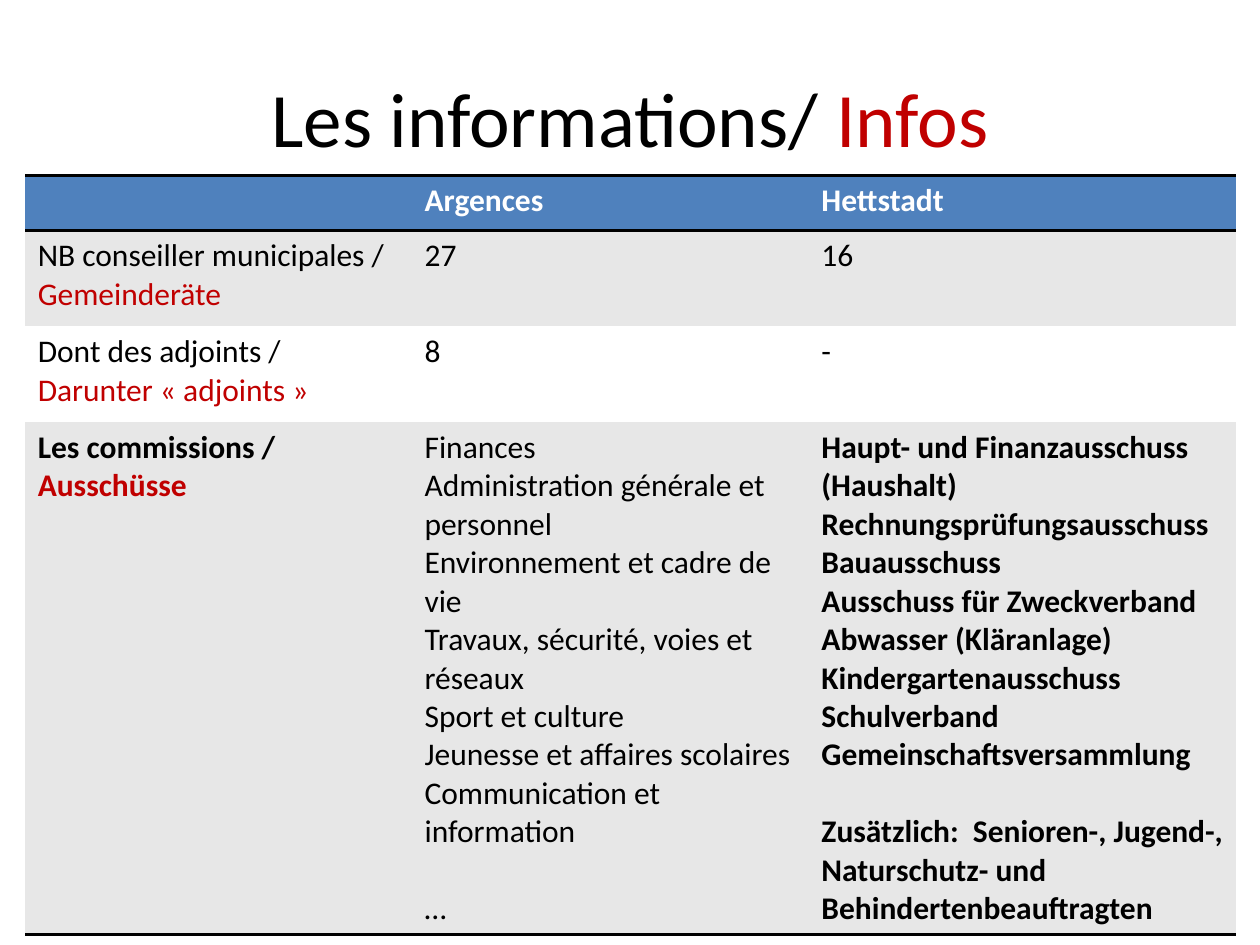
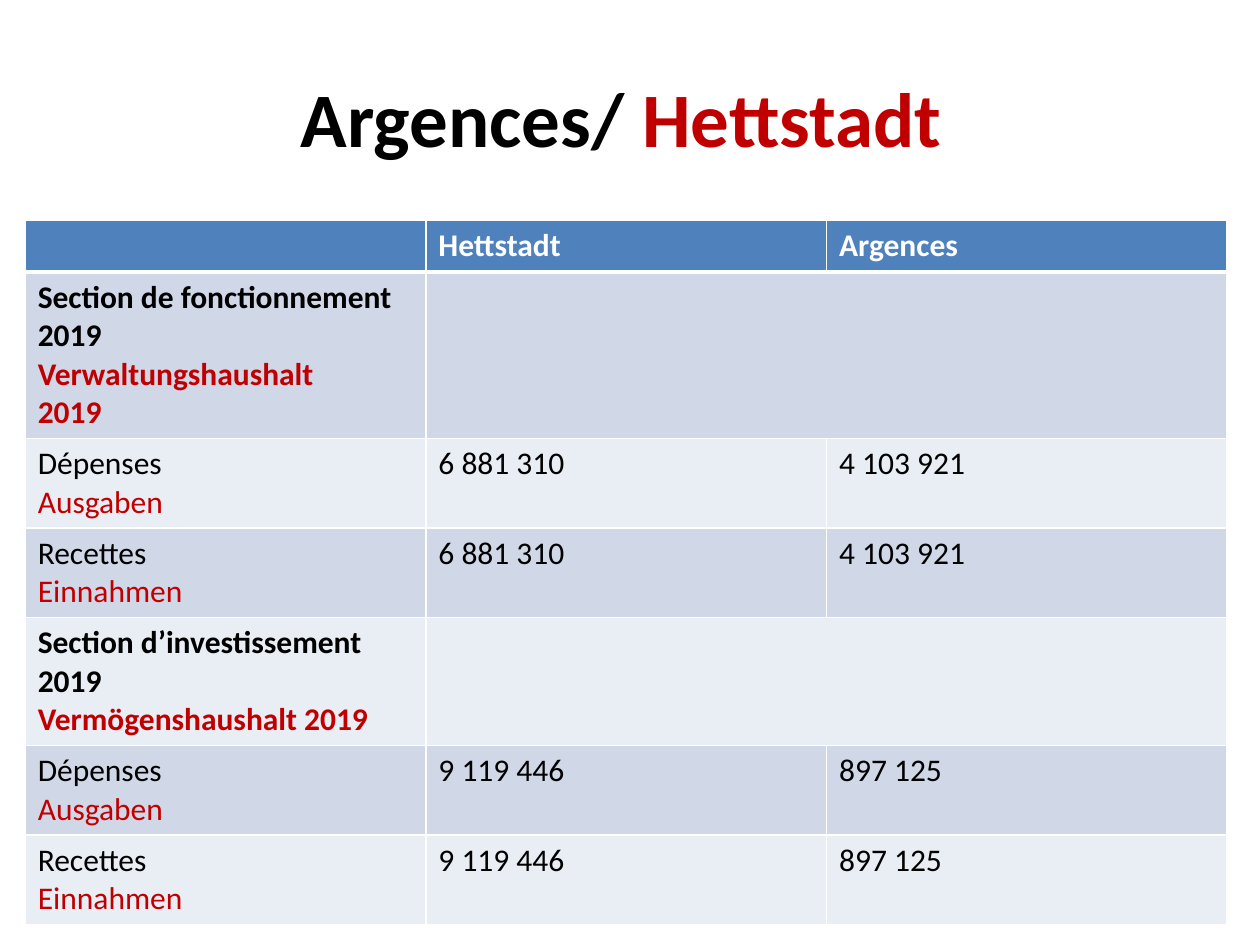
from lxml import etree
from pptx import Presentation
from pptx.dml.color import RGBColor
from pptx.enum import text
from pptx.oxml import ns
from pptx.util import Inches, Pt

COLORS = {
    "black": "000000", "red": "C00000", "white": "FFFFFF", "header": "4F81BD",
    "grey": "E7E7E7", "band": "D0D8E8", "light": "E9EDF4",
}
FONT = "Calibri"
NO_STYLE = "{2D5ABB26-0587-4C30-8999-92F81FD0307C}"


def write(p, content, size, bold, color="black"):
    for part, name in zip(content.split("|"), (color, "red")):
        if part:
            r = p.add_run()
            r.text = part
            r.font.name = FONT
            r.font.size = Pt(size)
            r.font.bold = bold
            r.font.color.rgb = RGBColor.from_string(COLORS[name])


def add_border(cell, side, color, width):
    tc_pr = cell._tc.get_or_add_tcPr()
    ln = etree.SubElement(tc_pr, ns.qn(f"a:ln{side}"), w=str(Pt(width)))
    if width:
        fill = etree.SubElement(ln, ns.qn("a:solidFill"))
        etree.SubElement(fill, ns.qn("a:srgbClr"), val=COLORS[color])
    else:
        etree.SubElement(ln, ns.qn("a:noFill"))


expenses = ["Dépenses", "|Ausgaben"]
income = ["Recettes", "|Einnahmen"]

slides = [
    {
        "title": "Les informations/ |Infos", "title_bold": False,
        "left": 0.2, "top": 1.39,
        "cols": [3.07, 3.15, 3.39], "heights": [0.44, 0.76, 0.76, 4.06],
        "bands": ["grey", "white"], "bold": [(3, 0), (3, 2)],
        "merged": [], "grid": False,
        "rows": [
            [[], ["Argences"], ["Hettstadt"]],
            [["NB conseiller municipales / |Gemeinderäte"], ["27"], ["16"]],
            [["Dont des adjoints /", "|Darunter « adjoints »"], ["8"], ["-"]],
            [
                ["Les commissions / |Ausschüsse"],
                [
                    "Finances",
                    "Administration générale et personnel",
                    "Environnement et cadre de vie",
                    "Travaux, sécurité, voies et réseaux",
                    "Sport et culture",
                    "Jeunesse et affaires scolaires",
                    "Communication et information",
                    "…",
                ],
                [
                    "Haupt- und Finanzausschuss (Haushalt)",
                    "Rechnungsprüfungsausschuss Bauausschuss",
                    "Ausschuss für Zweckverband Abwasser (Kläranlage)",
                    "Kindergartenausschuss",
                    "Schulverband",
                    "Gemeinschaftsversammlung",
                    "Zusätzlich:  Senioren-, Jugend-, Naturschutz- und Behindertenbeauftragten",
                ],
            ],
        ],
    },
    {
        "title": "Argences/ |Hettstadt ", "title_bold": True,
        "left": 0.2, "top": 1.75,
        "cols": [3.18] * 3, "heights": [0.41, 1.31, 0.71, 0.71, 1.01, 0.71, 0.71],
        "bands": ["band", "light"], "bold": [(1, 0), (4, 0)],
        "merged": [1, 4], "grid": True,
        "rows": [
            [[], ["Hettstadt"], ["Argences"]],
            [["Section de fonctionnement 2019", "|Verwaltungshaushalt", "|2019"], [], []],
            [expenses, ["6 881 310"], ["4 103 921"]],
            [income, ["6 881 310"], ["4 103 921"]],
            [["Section d’investissement 2019", "|Vermögenshaushalt 2019"], [], []],
            [expenses, ["9 119 446"], ["897 125"]],
            [income, ["9 119 446"], ["897 125"]],
        ],
    },
]

prs = Presentation()
prs.slide_width, prs.slide_height = Inches(10), Inches(7.5)

for data in slides:
    s = prs.slides.add_slide(prs.slide_layouts[5])
    title = s.shapes.title
    title.left, title.top = Inches(0.5), Inches(0.3)
    title.width, title.height = Inches(9), Inches(1.25)
    tf = title.text_frame
    tf.vertical_anchor = text.MSO_ANCHOR.MIDDLE
    tf.paragraphs[0].alignment = text.PP_ALIGN.CENTER
    write(tf.paragraphs[0], data["title"], 44, data["title_bold"])

    rows, cols, heights = data["rows"], data["cols"], data["heights"]
    frame = s.shapes.add_table(
        len(rows), len(cols), Inches(data["left"]), Inches(data["top"]),
        Inches(sum(cols)), Inches(sum(heights)))
    table = frame.table
    table._tbl.tblPr.find(ns.qn("a:tableStyleId")).text = NO_STYLE
    for column, width in zip(table.columns, cols):
        column.width = Inches(width)
    for row, height in zip(table.rows, heights):
        row.height = Inches(height)
    for i in data["merged"]:
        table.cell(i, 1).merge(table.cell(i, 2))

    last = len(rows) - 1
    for i, row in enumerate(rows):
        for j, lines in enumerate(row):
            cell = table.cell(i, j)
            if data["grid"]:
                color = "white"
                widths = {"L": 1, "R": 1, "T": 3 if i == 1 else 1, "B": 3 if i == 0 else 1}
            else:
                color = "black"
                widths = {"L": 0, "R": 0, "T": 2 if i < 2 else 0, "B": 2 if i in (0, last) else 0}
            for side, width in widths.items():
                add_border(cell, side, color, width)
            cell.fill.solid()
            fill = "header" if i == 0 else data["bands"][(i - 1) % 2]
            cell.fill.fore_color.rgb = RGBColor.from_string(COLORS[fill])
            tf = cell.text_frame
            for k, line in enumerate(lines):
                p = tf.add_paragraph() if k else tf.paragraphs[0]
                write(p, line, 18, i == 0 or (i, j) in data["bold"],
                      "white" if i == 0 else "black")
                if line == "…" or line.startswith("Zusätzlich"):
                    p.space_before = Pt(22)

prs.save("out.pptx")
